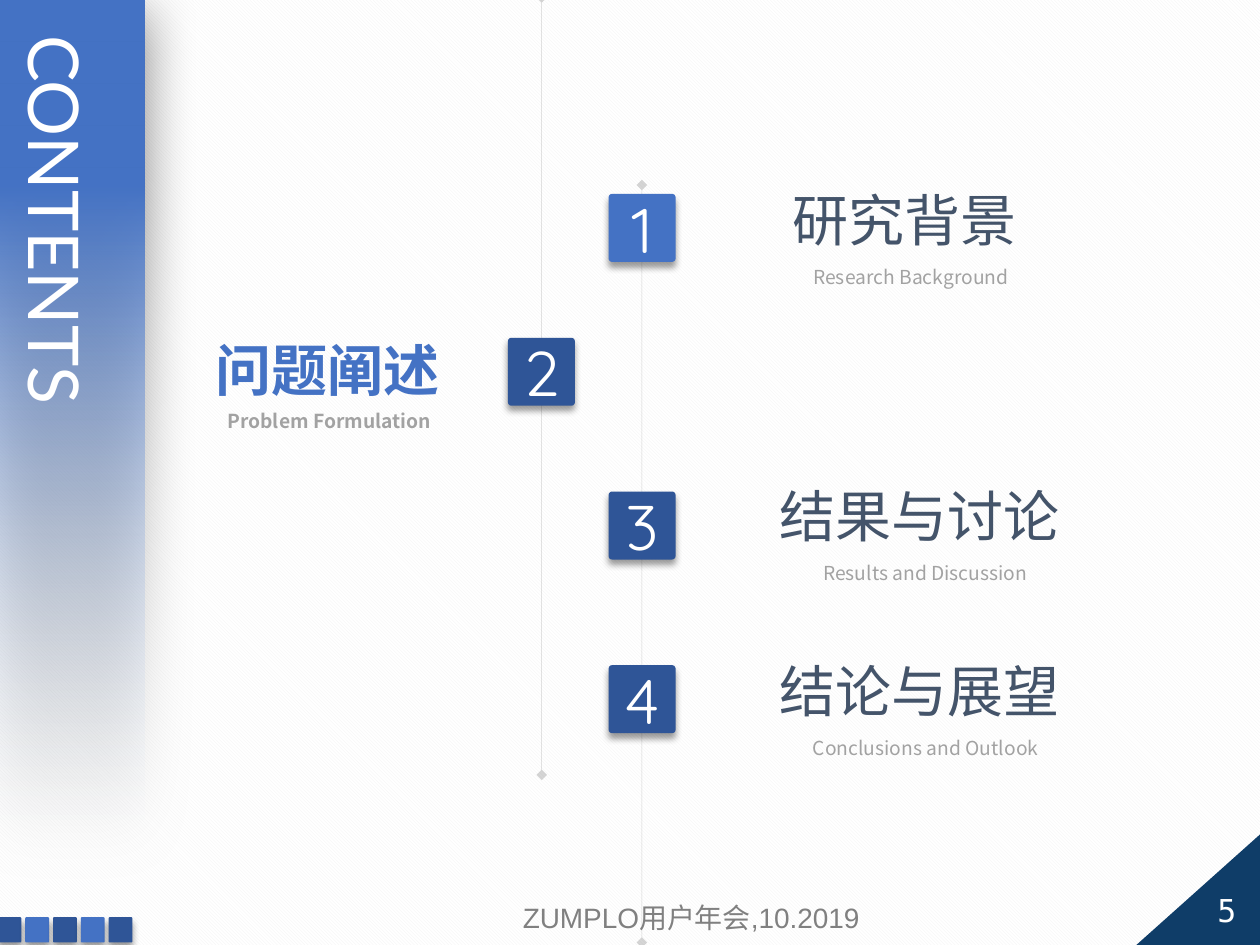
"""Build the contents slide with the second chapter highlighted."""
import pptx
import pptx.dml.color
import pptx.enum.dml
import pptx.enum.shapes
import pptx.enum.text
import pptx.oxml.ns
import pptx.util
from lxml import etree

Cm = pptx.util.Cm
Pt = pptx.util.Pt
qn = pptx.oxml.ns.qn
RGBColor = pptx.dml.color.RGBColor
SHAPE = pptx.enum.shapes.MSO_SHAPE
ALIGN = pptx.enum.text.PP_ALIGN
ANCHOR = pptx.enum.text.MSO_ANCHOR

WHITE = RGBColor(0xFF, 0xFF, 0xFF)
BLACK = RGBColor(0x00, 0x00, 0x00)
PATTERN_GRAY = RGBColor(0xF2, 0xF2, 0xF2)
GRAY = RGBColor(0x80, 0x80, 0x80)
CAPTION_GRAY = RGBColor(0xA2, 0xA2, 0xA2)
SLATE = RGBColor(0x44, 0x54, 0x6A)
BLUE = RGBColor(0x44, 0x72, 0xC4)
DARK_BLUE = RGBColor(0x2F, 0x55, 0x97)
NAVY = RGBColor(0x0F, 0x3D, 0x68)
PALE = RGBColor(0xF7, 0xFA, 0xFD)

CJK_FONT = "Noto Sans CJK SC"
SQUARE_SHADOW = (40, 4, 3, 90)
BANNER_SHADOW = (50, 31, 6, 97)

CHAPTERS = [
    {"square": (12.27, 3.91), "fill": BLUE, "color": SLATE, "bold": False,
     "title": ("研究背景", 15.72, 3.61, 5.08),
     "caption": ("Research Background", 16.08, 5.23, 4.57)},
    {"square": (10.24, 6.81), "fill": DARK_BLUE, "color": BLUE, "bold": True,
     "title": ("问题阐述", 4.09, 6.63, 5.08),
     "caption": ("Problem Formulation", 4.29, 8.13, 4.7)},
    {"square": (12.27, 9.91), "fill": DARK_BLUE, "color": SLATE, "bold": False,
     "title": ("结果与讨论", 15.47, 9.58, 6.22),
     "caption": ("Results and Discussion", 16.28, 11.2, 4.75)},
    {"square": (12.27, 13.41), "fill": DARK_BLUE, "color": SLATE, "bold": False,
     "title": ("结论与展望", 15.47, 13.11, 6.22),
     "caption": ("Conclusions and Outlook", 16.05, 14.71, 5.23)},
]
TIMELINES = [(12.94, 3.73, 19.0), (10.92, -0.05, 15.62)]
TITLE_HEIGHT, CAPTION_HEIGHT = 1.63, 0.74
SQUARE_SIZE = (1.35, 1.37)
MINI_SIZE = (0.48, 0.51)
MINI_LEFT, MINI_TOP, MINI_STEP, MINI_COUNT = -0.05, 18.49, 0.56, 5


def add_child(parent, tag, **attributes):
    child = etree.SubElement(parent, qn(tag))
    for name, value in attributes.items():
        child.set(name, str(value))
    return child


def add_alpha(color_element, percent):
    add_child(color_element, "a:alpha", val=percent * 1000)


def write(shape, text, size, font, color, align=ALIGN.CENTER, bold=False):
    paragraph = shape.text_frame.paragraphs[0]
    paragraph.text = text
    paragraph.alignment = align
    paragraph.font.size = Pt(size)
    paragraph.font.bold = bold
    paragraph.font.color.rgb = color
    paragraph.font.name = font
    properties = paragraph._p.pPr.find(qn("a:defRPr"))
    add_child(properties, "a:ea", typeface=CJK_FONT)


def add_text(shapes, box, *style, wrap=False, **options):
    textbox = shapes.add_textbox(*map(Cm, box))
    textbox.text_frame.word_wrap = wrap
    textbox.text_frame.auto_size = pptx.enum.text.MSO_AUTO_SIZE.SHAPE_TO_FIT_TEXT
    write(textbox, *style, **options)
    return textbox


def add_plain_shape(shapes, kind, box, fill=None):
    shape = shapes.add_shape(kind, *map(Cm, box))
    shape.shadow.inherit = False
    shape.line.fill.background()
    if fill is None:
        shape.fill.background()
    else:
        shape.fill.solid()
        shape.fill.fore_color.rgb = fill
    return shape


def add_shadow(shape, opacity, blur, distance, angle):
    effects = shape.element.spPr.find(qn("a:effectLst"))
    shadow = add_child(effects, "a:outerShdw", blurRad=Pt(blur), dist=Pt(distance),
                       dir=angle * 60000, algn="ctr", rotWithShape=0)
    add_alpha(add_child(shadow, "a:srgbClr", val=BLACK), opacity)


def add_square(shapes, left, top, size, fill):
    square = add_plain_shape(shapes, SHAPE.ROUNDED_RECTANGLE, (left, top, *size), fill)
    square.adjustments[0] = 0.05
    add_shadow(square, *SQUARE_SHADOW)
    return square


def add_timeline(shapes, x, top, bottom):
    line = shapes.add_connector(pptx.enum.shapes.MSO_CONNECTOR.STRAIGHT,
                                Cm(x), Cm(top), Cm(x), Cm(bottom))
    line.line.width = Pt(0.25)
    line.line.color.rgb = GRAY
    outline = line.element.spPr.find(qn("a:ln"))
    add_alpha(outline.find(".//" + qn("a:srgbClr")), 33)
    for end in ("a:headEnd", "a:tailEnd"):
        add_child(outline, end, type="diamond")
    add_child(line.element.spPr, "a:effectLst")


def add_footer(shapes):
    add_text(shapes, (8.41, 18.03, 11.05, 1.27), "ZUMPLO用户年会,10.2019",
             16, "Arial", GRAY, wrap=True)
    corner = add_plain_shape(shapes, SHAPE.RIGHT_TRIANGLE, (22.91, 16.69, 2.64, 2.36), NAVY)
    number = add_plain_shape(shapes, SHAPE.PENTAGON, (23.19, 17.65, 2.74, 1.4))
    for shape in (corner, number):
        shape.element.spPr.find(qn("a:xfrm")).set("flipH", "1")
    number.text_frame.vertical_anchor = ANCHOR.MIDDLE
    write(number, "5", 18, "DejaVu Sans Mono", WHITE)


def add_banner(shapes):
    banner = add_plain_shape(shapes, SHAPE.RECTANGLE, (-7.04, 7.01, 16.97, 2.92))
    banner.rotation = 90
    banner.fill.gradient()
    banner.fill.gradient_angle = 180
    for stop, position, color in zip(banner.fill.gradient_stops, (0, 0.78), (PALE, BLUE)):
        stop.position = position
        stop.color.rgb = color
    add_alpha(banner.element.spPr.find(".//" + qn("a:srgbClr")), 0)
    add_shadow(banner, *BANNER_SHADOW)


def add_chapter_text(shapes, chapter):
    group = shapes.add_group_shape().shapes
    title, *title_box = chapter["title"]
    caption, *caption_box = chapter["caption"]
    add_text(group, (*title_box, TITLE_HEIGHT), title, 32, CJK_FONT,
             chapter["color"], align=ALIGN.LEFT, bold=chapter["bold"])
    add_text(group, (*caption_box, CAPTION_HEIGHT), caption, 11, CJK_FONT,
             CAPTION_GRAY, bold=chapter["bold"])


def main():
    presentation = pptx.Presentation()
    presentation.slide_width, presentation.slide_height = Cm(25.4), Cm(19.05)
    slide = presentation.slides.add_slide(presentation.slide_layouts[6])
    background = slide.background.fill
    background.patterned()
    background.pattern = pptx.enum.dml.MSO_PATTERN.LIGHT_DOWNWARD_DIAGONAL
    background.fore_color.rgb = PATTERN_GRAY
    background.back_color.rgb = WHITE
    shapes = slide.shapes

    add_footer(shapes)
    for timeline in TIMELINES:
        add_timeline(shapes, *timeline)
    for number, chapter in enumerate(CHAPTERS, start=1):
        square = add_square(shapes, *chapter["square"], SQUARE_SIZE, chapter["fill"])
        square.text_frame.vertical_anchor = ANCHOR.MIDDLE
        write(square, str(number), 36, "Quicksand", WHITE)
    for chapter in CHAPTERS:
        add_chapter_text(shapes, chapter)

    add_banner(shapes)
    mini_squares = shapes.add_group_shape().shapes
    for index in range(MINI_COUNT):
        add_square(mini_squares, MINI_LEFT + index * MINI_STEP, MINI_TOP, MINI_SIZE,
                   (DARK_BLUE, BLUE)[index % 2])
    heading = add_text(shapes, (-0.13, 0.46, 2.24, 11.25), "CONTENTS", 40, "Lato",
                       WHITE, wrap=True, align=ALIGN.LEFT)
    heading.text_frame._txBody.bodyPr.set("vert", "eaVert")
    presentation.save("out.pptx")


if __name__ == "__main__":
    main()
